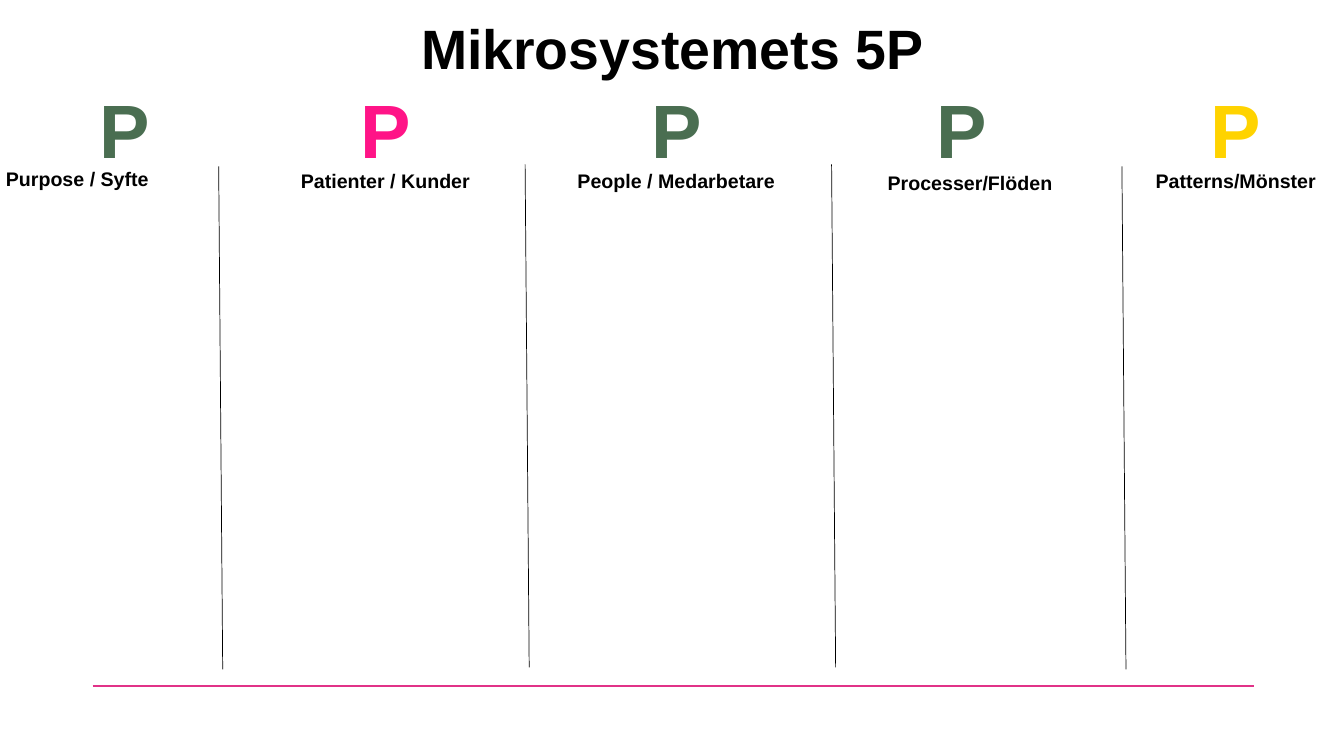
from dataclasses import dataclass

from lxml.etree import SubElement
from pptx import Presentation
from pptx.dml.color import RGBColor
from pptx.enum.shapes import MSO_CONNECTOR
from pptx.enum.text import MSO_ANCHOR, PP_ALIGN
from pptx.oxml.ns import qn
from pptx.slide import Slide
from pptx.text.text import TextFrame
from pptx.util import Pt


@dataclass(frozen=True)
class Theme:
    font: str = "Arial"
    black: str = "000000"
    green: str = "4A6E51"
    pink: str = "FF1487"
    yellow: str = "FFD300"
    rule: str = "E13288"
    title_size: float = 39.6
    letter_size: float = 54
    label_size: float = 14


@dataclass(frozen=True)
class Box:
    left: float
    top: float
    width: float
    height: float


@dataclass(frozen=True)
class Column:
    label: str
    color: str
    letter: Box
    area: Box
    align: PP_ALIGN = PP_ALIGN.CENTER


@dataclass(frozen=True)
class Line:
    x1: float
    y1: float
    x2: float
    y2: float
    color: str
    width: float


THEME = Theme()


def letter_box(left: float, height: float = 72.7) -> Box:
    return Box(left, 55.4, 51.1, height)


def divider(x: float, y: float) -> Line:
    return Line(x, y, x + 2.9, y + 359.3, THEME.black, 0.5)


COLUMNS = [
    Column("Purpose / Syfte", THEME.green, letter_box(63.4),
           Box(-2.9, 115.9, 184.3, 337), PP_ALIGN.LEFT),
    Column("Patienter / Kunder", THEME.pink, letter_box(249.8, 138.2),
           Box(181.4, 117.4, 187.9, 337)),
    Column("People / Medarbetare", THEME.green, letter_box(457.9),
           Box(371.5, 117.4, 223.2, 322.6)),
    Column("Processer/Flöden", THEME.green, letter_box(661.7),
           Box(595.4, 118.8, 195.1, 338.4)),
    Column("Patterns/Mönster", THEME.yellow, letter_box(856.8),
           Box(790.6, 117.4, 184.3, 340.6)),
]

LINES = [
    Line(66.2, 490.3, 895.7, 490.3, THEME.rule, 1.5),
    divider(156.2, 118.8),
    divider(375.1, 117.4),
    divider(594, 117.4),
    divider(801.4, 118.8),
]


def write(tf: TextFrame, text: str, size: float, color: str,
          align: PP_ALIGN = PP_ALIGN.CENTER) -> None:
    p = tf.paragraphs[0]
    p.alignment = align
    r = p.add_run()
    r.text = text
    r.font.name = THEME.font
    r.font.size = Pt(size)
    r.font.bold = True
    r.font.color.rgb = RGBColor.from_string(color)


def add_title(s: Slide, text: str, box: Box) -> None:
    sp = s.shapes.title
    sp.left, sp.top = Pt(box.left), Pt(box.top)
    sp.width, sp.height = Pt(box.width), Pt(box.height)
    tf = sp.text_frame
    tf.vertical_anchor = MSO_ANCHOR.MIDDLE
    write(tf, text, THEME.title_size, THEME.black)
    tf.paragraphs[0].line_spacing = 0.9


def add_text(s: Slide, box: Box, text: str, size: float, color: str,
             align: PP_ALIGN = PP_ALIGN.CENTER, wrap: bool = True) -> None:
    sp = s.shapes.add_textbox(Pt(box.left), Pt(box.top),
                              Pt(box.width), Pt(box.height))
    sp.text_frame.word_wrap = wrap
    write(sp.text_frame, text, size, color, align)


def add_line(s: Slide, line: Line) -> None:
    sp = s.shapes.add_connector(MSO_CONNECTOR.STRAIGHT, Pt(line.x1),
                                Pt(line.y1), Pt(line.x2), Pt(line.y2))
    sp.line.color.rgb = RGBColor.from_string(line.color)
    sp.line.width = Pt(line.width)
    SubElement(sp._element.spPr, qn("a:effectLst"))


def main() -> None:
    prs = Presentation()
    prs.slide_width, prs.slide_height = Pt(960), Pt(540)
    s = prs.slides.add_slide(prs.slide_layouts[5])
    add_title(s, "Mikrosystemets 5P", Box(66.2, 7, 828, 59))
    for line in LINES:
        add_line(s, line)
    for column in COLUMNS:
        add_text(s, column.letter, "P", THEME.letter_size, column.color,
                 wrap=False)
        add_text(s, column.area, column.label, THEME.label_size, THEME.black,
                 column.align)
    prs.save("out.pptx")


if __name__ == "__main__":
    main()
